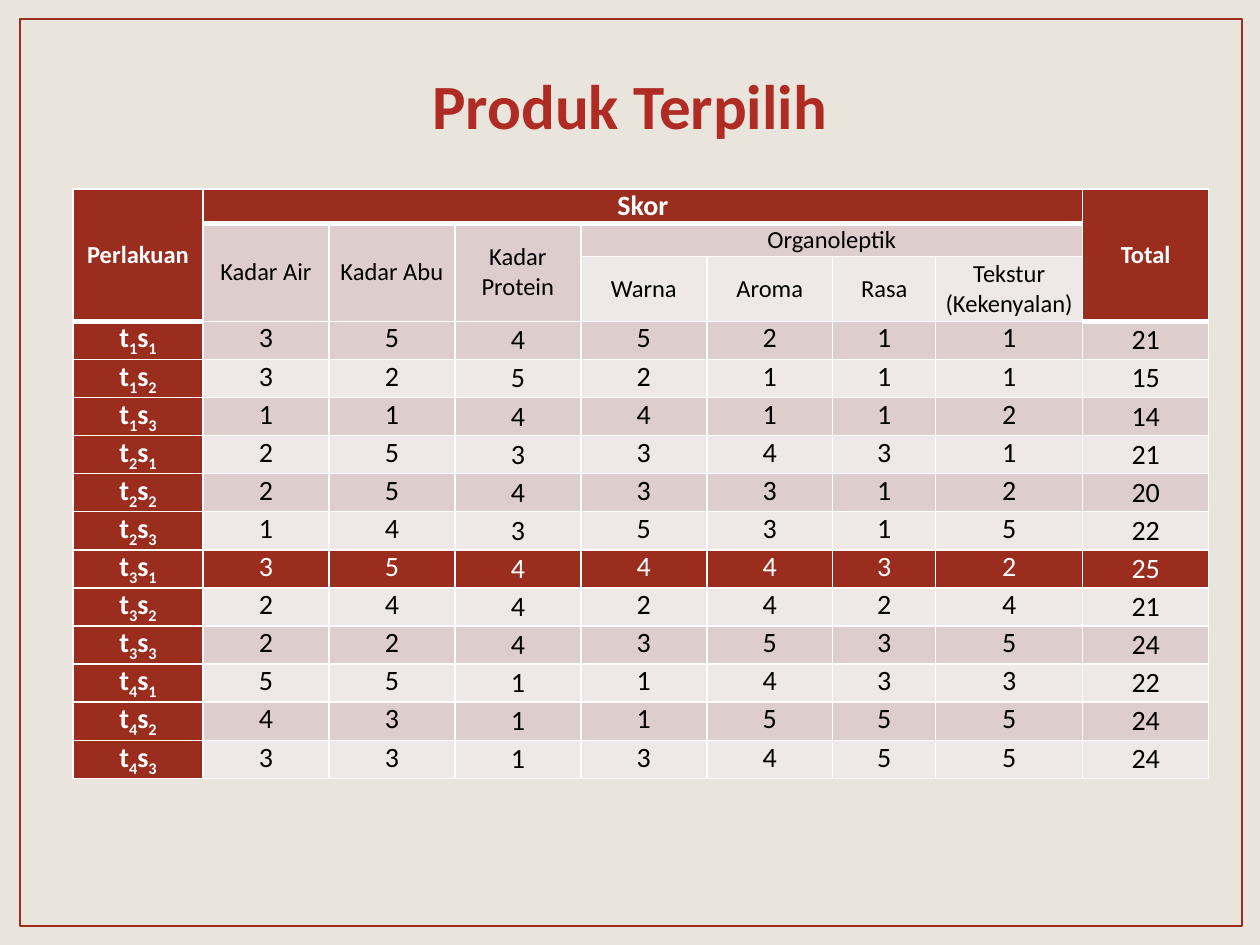
from lxml import etree
from pptx import Presentation
from pptx.dml.color import RGBColor
from pptx.enum.shapes import MSO_SHAPE
from pptx.enum.text import MSO_ANCHOR, PP_ALIGN
from pptx.oxml.ns import qn
from pptx.util import Pt

PX = 914400 // 126
FONT = "Calibri"
CENTER = PP_ALIGN.CENTER
TOP, MIDDLE, BOTTOM = MSO_ANCHOR.TOP, MSO_ANCHOR.MIDDLE, MSO_ANCHOR.BOTTOM
RECTANGLE = MSO_SHAPE.RECTANGLE

BEIGE = RGBColor(0xE9, 0xE5, 0xDC)
RED = RGBColor(0x9B, 0x2D, 0x1F)
DARK_BAND = RGBColor(0xDE, 0xCD, 0xCD)
LIGHT_BAND = RGBColor(0xEF, 0xE8, 0xE8)
WHITE = RGBColor(0xFF, 0xFF, 0xFF)
BLACK = RGBColor(0, 0, 0)
TITLE_STOPS = [(0, RGBColor(0xDD, 0x7F, 0x7B)),
               (75, RGBColor(0xAF, 0x2C, 0x25)),
               (100, RGBColor(0x8A, 0x10, 0x00))]

COLUMN_WIDTHS = [130, 126, 126, 126, 126, 126, 103, 147, 126]
HEADER_HEIGHTS = [33, 33, 65]
SCORE_HEIGHT = 35
HEADER_ROWS = len(HEADER_HEIGHTS)
LAST_COLUMN = len(COLUMN_WIDTHS) - 1
MIDDLE_COLUMNS = (3, LAST_COLUMN)

# text, row, column, rows spanned, columns spanned, size
MAIN_HEADERS = [
    ("Perlakuan", 0, 0, 3, 1, 14),
    ("Skor", 0, 1, 1, 7, 16),
    ("Total", 0, 8, 3, 1, 14),
]
SUB_HEADERS = [
    ("Kadar Air", 1, 1, 2, 1),
    ("Kadar Abu", 1, 2, 2, 1),
    ("Kadar Protein", 1, 3, 2, 1),
    ("Organoleptik", 1, 4, 1, 4),
    ("Warna", 2, 4, 1, 1),
    ("Aroma", 2, 5, 1, 1),
    ("Rasa", 2, 6, 1, 1),
    ("Tekstur (Kekenyalan)", 2, 7, 1, 1),
]
SCORES = [
    [3, 5, 4, 5, 2, 1, 1, 21],
    [3, 2, 5, 2, 1, 1, 1, 15],
    [1, 1, 4, 4, 1, 1, 2, 14],
    [2, 5, 3, 3, 4, 3, 1, 21],
    [2, 5, 4, 3, 3, 1, 2, 20],
    [1, 4, 3, 5, 3, 1, 5, 22],
    [3, 5, 4, 4, 4, 3, 2, 25],
    [2, 4, 4, 2, 4, 2, 4, 21],
    [2, 2, 4, 3, 5, 3, 5, 24],
    [5, 5, 1, 1, 4, 3, 3, 22],
    [4, 3, 1, 1, 5, 5, 5, 24],
    [3, 3, 1, 3, 4, 5, 5, 24],
]
BEST_TOTAL = max(scores[-1] for scores in SCORES)


def write_text(frame, text, size=16, color=BLACK, bold=False, spacing=0, subscript_digits=False):
    para = frame.paragraphs[0]
    para.alignment = CENTER
    para.space_before = para.space_after = Pt(spacing)
    for piece in text if subscript_digits else [text]:
        span = para.add_run()
        span.text = piece
        span.font.name, span.font.size, span.font.bold = FONT, Pt(size), bold
        span.font.color.rgb = color
        if subscript_digits and piece.isdigit():
            span._r.get_or_add_rPr().set("baseline", "-25000")
    return para


def apply_gradient(font, stops):
    """Fill the text from top to bottom with any number of colour stops."""
    font.fill.gradient()
    font.fill.gradient_angle = 270
    stop_list = font._element.find(f".//{qn('a:gsLst')}")
    for old_stop in list(stop_list):
        stop_list.remove(old_stop)
    for percent, color in stops:
        stop = etree.SubElement(stop_list, qn("a:gs"), pos=str(percent * 1000))
        etree.SubElement(stop, qn("a:srgbClr"), val=str(color))


def add_frame(page):
    frame = page.shapes.add_shape(RECTANGLE, 20 * PX, 19 * PX, 1222 * PX, 907 * PX)
    frame.shadow.inherit = False
    frame.fill.background()
    frame.line.color.rgb = RED
    frame.line.width = Pt(1.5)


def set_title(page, text):
    title = page.shapes.title
    title.left, title.top = 63 * PX, 38 * PX
    title.width, title.height = 1134 * PX, 110 * PX
    title.text_frame.vertical_anchor = BOTTOM
    para = write_text(title.text_frame, text, size=36, bold=True)
    apply_gradient(para.runs[0].font, TITLE_STOPS)


def set_borders(cell, **widths):
    """Draw white borders, 1 pt wide unless a side is given another width."""
    properties = cell._tc.get_or_add_tcPr()
    for index, side in enumerate(("L", "R", "T", "B")):
        line = etree.Element(qn(f"a:ln{side}"), w=str(Pt(widths.get(side, 1))))
        fill = etree.SubElement(line, qn("a:solidFill"))
        etree.SubElement(fill, qn("a:srgbClr"), val=str(WHITE))
        properties.insert(index, line)


def fill_cell(cell, text, fill, anchor=MIDDLE, **text_format):
    cell.margin_left = cell.margin_right = 9 * PX
    cell.margin_top = cell.margin_bottom = 0
    cell.vertical_anchor = anchor
    cell.fill.solid()
    cell.fill.fore_color.rgb = fill
    write_text(cell.text_frame, text, spacing=1, **text_format)


def add_header(table, text, row, column, rows, columns, fill, **text_format):
    cell = table.cell(row, column)
    if rows * columns > 1:
        cell.merge(table.cell(row + rows - 1, column + columns - 1))
    fill_cell(cell, text, fill, **text_format)


def add_scores(table):
    for index, scores in enumerate(SCORES):
        row = HEADER_ROWS + index
        best = scores[-1] == BEST_TOTAL
        band = RED if best else (DARK_BAND, LIGHT_BAND)[index % 2]
        treatment = f"t{index // 3 + 1}s{index % 3 + 1}"
        fill_cell(table.cell(row, 0), treatment, RED, anchor=TOP,
                  color=WHITE, bold=True, subscript_digits=True)
        for column, score in enumerate(scores, start=1):
            fill_cell(table.cell(row, column), str(score), band,
                      anchor=MIDDLE if column in MIDDLE_COLUMNS else TOP,
                      color=WHITE if best else BLACK)


def add_grid_lines(table):
    """Thicken the line below the red headers; keep the others thin."""
    for row in range(len(table.rows)):
        for column in range(len(table.columns)):
            last_header_row = HEADER_ROWS - 1 if column in (0, LAST_COLUMN) else 0
            widths = {}
            if row in (0, last_header_row):
                widths["B"] = 3
            if row == last_header_row + 1:
                widths["T"] = 3
            set_borders(table.cell(row, column), **widths)


def add_score_table(page):
    heights = HEADER_HEIGHTS + [SCORE_HEIGHT] * len(SCORES)
    table = page.shapes.add_table(len(heights), len(COLUMN_WIDTHS), 73 * PX, 189 * PX,
                                  sum(COLUMN_WIDTHS) * PX, sum(heights) * PX).table
    table.first_row = table.horz_banding = False
    for column, width in zip(table.columns, COLUMN_WIDTHS):
        column.width = width * PX
    for row, height in zip(table.rows, heights):
        row.height = height * PX
    for *place, size in MAIN_HEADERS:
        add_header(table, *place, fill=RED, size=size, color=WHITE, bold=True)
    for place in SUB_HEADERS:
        add_header(table, *place, fill=DARK_BAND if place[1] == 1 else LIGHT_BAND, size=14)
    add_scores(table)
    add_grid_lines(table)


def main():
    deck = Presentation()
    deck.slide_width, deck.slide_height = 1260 * PX, 945 * PX
    page = deck.slides.add_slide(deck.slide_layouts[5])
    page.background.fill.solid()
    page.background.fill.fore_color.rgb = BEIGE
    add_frame(page)
    set_title(page, "Produk Terpilih")
    add_score_table(page)
    deck.save("out.pptx")


if __name__ == "__main__":
    main()
